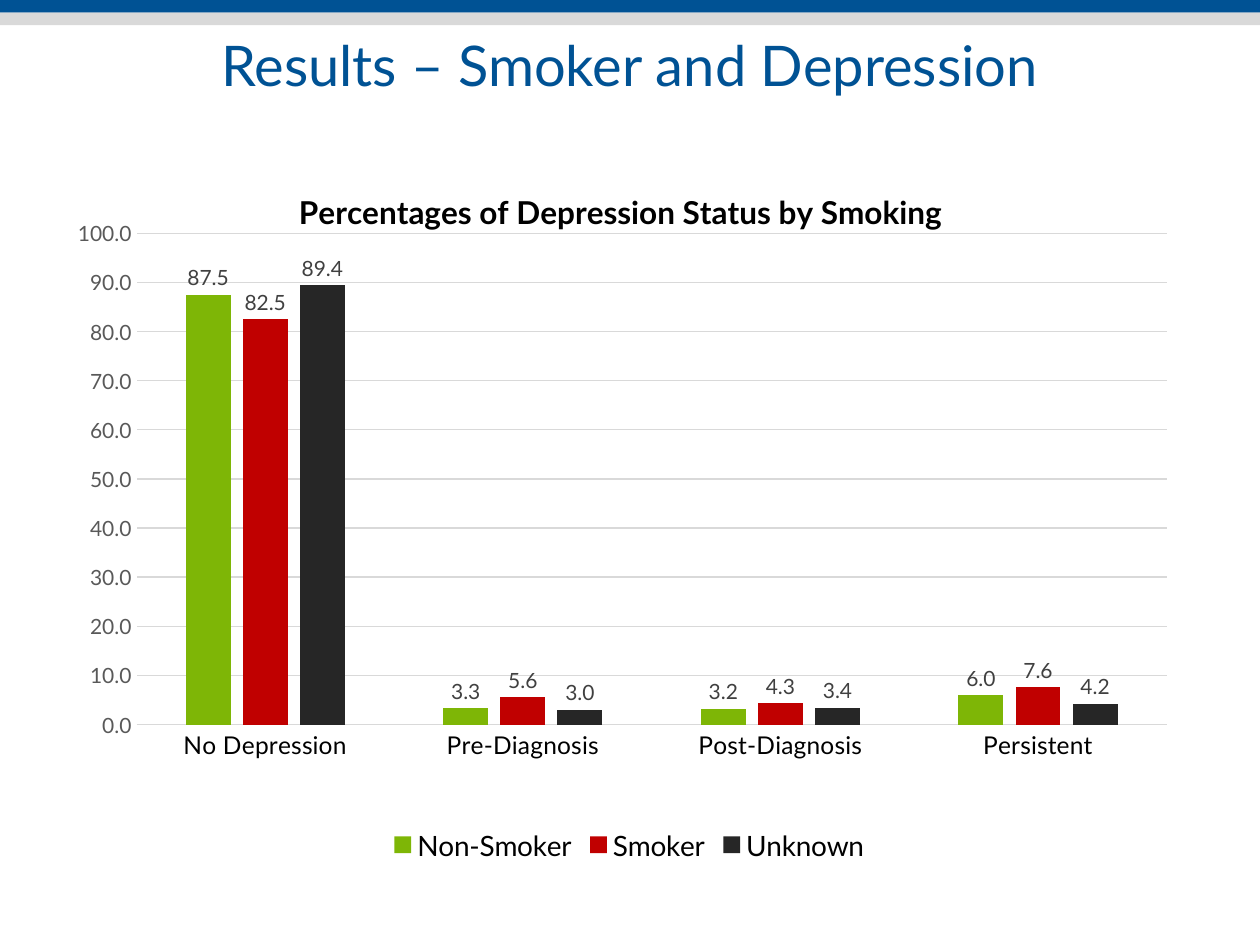
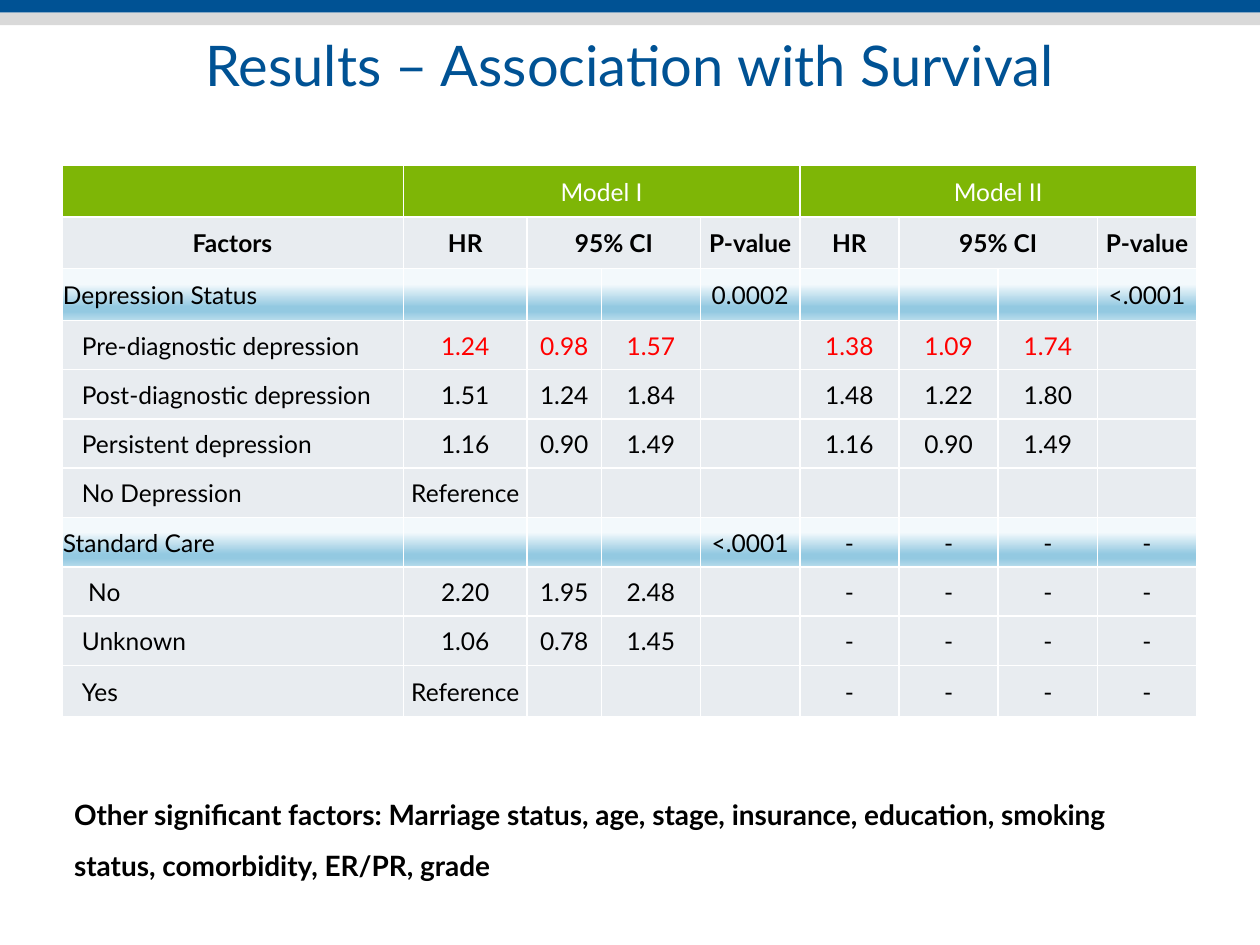
from lxml.etree import SubElement
from pptx import Presentation
from pptx.chart.data import CategoryChartData
from pptx.dml.color import RGBColor
from pptx.enum.chart import XL_CHART_TYPE, XL_LABEL_POSITION, XL_LEGEND_POSITION, XL_TICK_MARK
from pptx.enum.shapes import MSO_SHAPE
from pptx.enum.text import MSO_ANCHOR, PP_ALIGN
from pptx.oxml.ns import qn
from pptx.util import Pt

FACE = "Lato"
BLUE, GRAY, GREEN, PALE = "005294", "D9D9D9", "7EB606", "E8ECF0"
BLACK, WHITE, RED = "000000", "FFFFFF", "FF0000"
WIDE, BAND = 720, 7.2

GROUPS = ["No Depression", "Pre-Diagnosis", "Post-Diagnosis", "Persistent"]
SERIES = [
    ("Non-Smoker", GREEN, [87.5, 3.3, 3.2, 6.0]),
    ("Smoker", "C00000", [82.5, 5.6, 4.3, 7.6]),
    ("Unknown", "262626", [89.4, 3.0, 3.4, 4.2]),
]

DASH = ["-"] * 4
ROWS = [
    ["", "Model I", "", "", "", "Model II", "", "", ""],
    ["Factors"] + ["HR", "95% CI", "", "P-value"] * 2,
    ["Depression Status", "", "", "", "0.0002", "", "", "", "<.0001"],
    ["Pre-diagnostic depression", "1.24", "0.98", "1.57", "", "1.38", "1.09", "1.74", ""],
    ["Post-diagnostic depression", "1.51", "1.24", "1.84", "", "1.48", "1.22", "1.80", ""],
    ["Persistent depression", "1.16", "0.90", "1.49", "", "1.16", "0.90", "1.49", ""],
    ["No Depression", "Reference"] + [""] * 7,
    ["Standard Care", "", "", "", "<.0001"] + DASH,
    [" No", "2.20", "1.95", "2.48", ""] + DASH,
    ["Unknown", "1.06", "0.78", "1.45", ""] + DASH,
    ["Yes", "Reference", "", "", ""] + DASH,
]
HEAD, SUB, MARKED, BARS = 0, 1, 3, (2, 7)
SPANS = [(0, 1, 4), (0, 5, 8), (1, 2, 3), (1, 6, 7)]
COLS = [195.2, 70.8, 42.4] + [56.7] * 6
TALL, LOW = 29.5, 28.2
STOPS = [(30, "F3F9FC"), (74, "93C9E1"), (83, "93C9E1"), (100, "B7DBEB")]


def hue(code):
    return RGBColor.from_string(code)


def put(item, **values):
    for name, value in values.items():
        setattr(item, name, value)


def style(font, size, color=BLACK, bold=False):
    put(font, name=FACE, size=Pt(size), bold=bold)
    font.color.rgb = hue(color)


def paint(fill, color):
    fill.solid()
    fill.fore_color.rgb = hue(color)


def write(frame, text, size, color=BLACK, bold=False, **format):
    line = frame.paragraphs[0]
    put(line, **format)
    run = line.add_run()
    run.text = text
    style(run.font, size, color, bold)


def box(left, top, width, height):
    return Pt(left), Pt(top), Pt(width), Pt(height)


def start(deck, text):
    slide = deck.slides.add_slide(deck.slide_layouts[5])
    for row, color in enumerate((BLUE, GRAY)):
        band = slide.shapes.add_shape(MSO_SHAPE.RECTANGLE, *box(0, row * BAND, WIDE, BAND))
        paint(band.fill, color)
        band.line.fill.background()
        band.shadow.inherit = False
    title = slide.shapes.title
    left, top, width, height = box(0, 13.7, WIDE, 87.8)
    put(title, left=left, top=top, width=width, height=height)
    title.text_frame.vertical_anchor = MSO_ANCHOR.TOP
    write(title.text_frame, text, 32, BLUE, alignment=PP_ALIGN.CENTER)
    return slide


def place(node, index, **values):
    for old in node.findall(qn("c:layout")):
        node.remove(old)
    layout = node.makeelement(qn("c:layout"))
    node.insert(index, layout)
    manual = SubElement(layout, qn("c:manualLayout"))
    for name, value in values.items():
        SubElement(manual, qn("c:" + name), val=str(value))


def trace(line, color):
    line.width = Pt(0.75)
    line.color.rgb = hue(color)


def axes(chart):
    base, scale = chart.category_axis, chart.value_axis
    for axis, size, color in ((base, 14, BLACK), (scale, 12, "595959")):
        put(axis, major_tick_mark=XL_TICK_MARK.NONE, minor_tick_mark=XL_TICK_MARK.NONE)
        style(axis.tick_labels.font, size, color)
    trace(base.format.line, GRAY)
    put(scale, minimum_scale=0, maximum_scale=100, major_unit=10, has_major_gridlines=True)
    put(scale.tick_labels, number_format="0.0", number_format_is_linked=False)
    scale.format.line.fill.background()
    trace(scale.major_gridlines.format.line, GRAY)


def graph(slide, area):
    data = CategoryChartData(number_format="0.0")
    data.categories = GROUPS
    for name, _, values in SERIES:
        data.add_series(name, values)
    chart = slide.shapes.add_chart(XL_CHART_TYPE.COLUMN_CLUSTERED, *box(*area), data).chart
    style(chart.font, 10)
    put(chart, has_title=True, has_legend=True)
    write(chart.chart_title.text_frame, "Percentages of Depression Status by Smoking", 18, bold=True)
    put(chart.legend, position=XL_LEGEND_POSITION.BOTTOM, include_in_layout=False)
    style(chart.legend.font, 16)
    plot = chart.plots[0]
    put(plot, gap_width=219, overlap=-27, vary_by_categories=False)
    for series, (_, color, _) in zip(plot.series, SERIES):
        paint(series.format.fill, color)
        labels = series.data_labels
        put(labels, show_value=True, number_format="0.0", number_format_is_linked=False,
            position=XL_LABEL_POSITION.OUTSIDE_END)
        style(labels.font, 12, "404040")
    axes(chart)
    root = chart.element.find(qn("c:chart"))
    place(root.find(qn("c:title")), 1, xMode="edge", yMode="edge", x=0.2, y=0.04)
    place(root.find(qn("c:plotArea")), 0, layoutTarget="inner", xMode="edge", yMode="edge",
          x=0.06, y=0.11, w=0.92, h=0.69)


def edge(cell):
    props = cell._tc.get_or_add_tcPr()
    for side in "LRTB":
        line = SubElement(props, qn("a:ln" + side), w=str(Pt(1)))
        solid = SubElement(line, qn("a:solidFill"))
        SubElement(solid, qn("a:srgbClr"), val=WHITE)


def blend(cell):
    grad = SubElement(cell._tc.get_or_add_tcPr(), qn("a:gradFill"))
    stops = SubElement(grad, qn("a:gsLst"))
    for spot, color in STOPS:
        stop = SubElement(stops, qn("a:gs"), pos=str(spot * 1000))
        SubElement(stop, qn("a:srgbClr"), val=color)
    SubElement(grad, qn("a:lin"), ang="5400000", scaled="0")


def fit(cell, row, col, text):
    nested = col == 0 and row > SUB and row not in BARS
    put(cell, vertical_anchor=MSO_ANCHOR.MIDDLE, margin_left=Pt(11.5 if nested else 0.7),
        margin_right=Pt(0.7), margin_top=Pt(0.7), margin_bottom=0)
    edge(cell)
    if row in BARS:
        blend(cell)
    else:
        paint(cell.fill, GREEN if row == HEAD else PALE)
    if text:
        color = WHITE if row == HEAD else RED if row == MARKED and col else BLACK
        side = PP_ALIGN.CENTER if col or row == SUB else PP_ALIGN.LEFT
        write(cell.text_frame, text, 14, color, row == SUB, alignment=side)


def grid(slide, left, top):
    highs = [TALL] * 3 + [LOW] * 7 + [TALL]
    area = box(left, top, sum(COLS), sum(highs))
    table = slide.shapes.add_table(len(ROWS), len(COLS), *area).table
    put(table, first_row=False, horz_banding=False)
    for col, width in zip(table.columns, COLS):
        col.width = Pt(width)
    for row, high in zip(table.rows, highs):
        row.height = Pt(high)
    for row, first, last in SPANS:
        table.cell(row, first).merge(table.cell(row, last))
    for row, texts in enumerate(ROWS):
        for col, text in enumerate(texts):
            fit(table.cell(row, col), row, col, text)


def note(slide, area):
    frame = slide.shapes.add_textbox(*box(*area)).text_frame
    frame.word_wrap = True
    write(frame, "Other significant factors: Marriage status, age, stage, insurance, "
          "education, smoking status, comorbidity, ER/PR, grade", 16, bold=True,
          line_spacing=1.5, space_after=Pt(6))


def main():
    deck = Presentation()
    put(deck, slide_width=Pt(WIDE), slide_height=Pt(540))
    graph(start(deck, "Results – Smoker and Depression"), (39.6, 88.6, 640, 406.8))
    slide = start(deck, "Results – Association with Survival")
    grid(slide, 35.3, 94.6)
    note(slide, (35.3, 442.8, 628.6, 72))
    deck.save("out.pptx")


if __name__ == "__main__":
    main()
